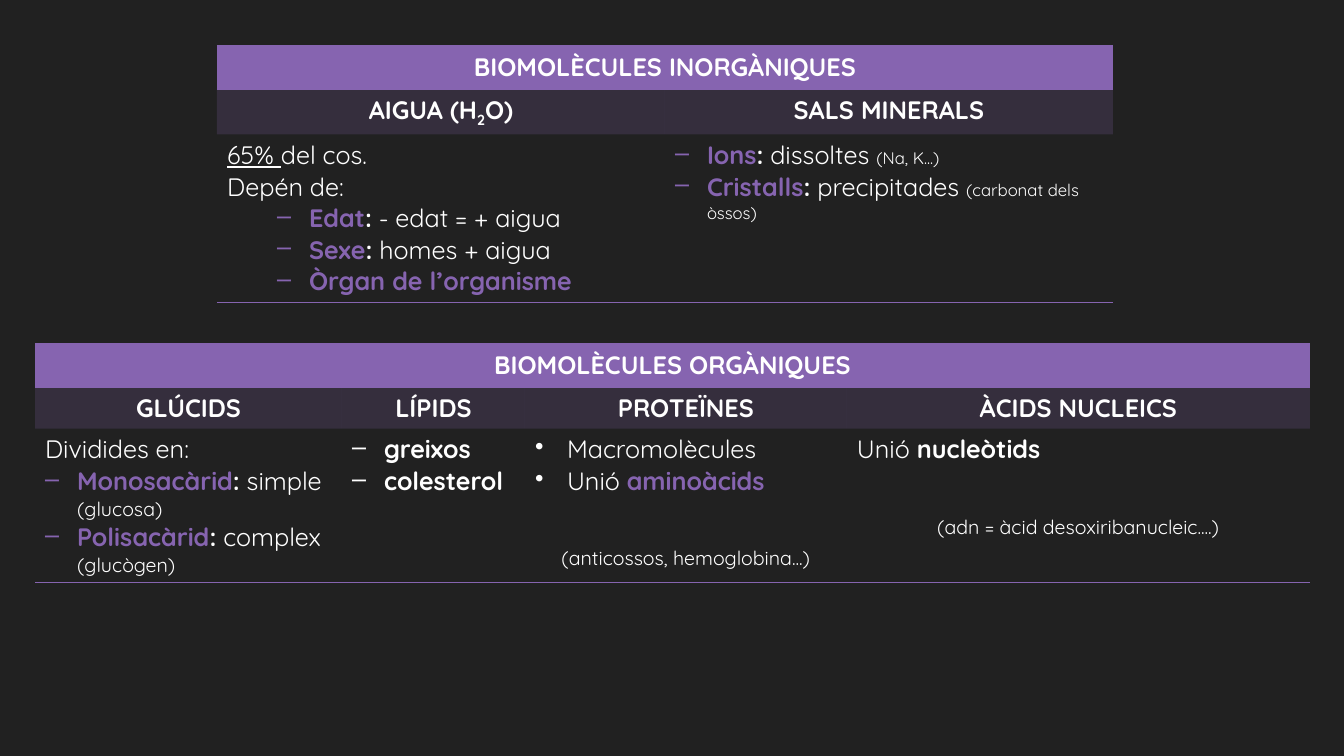
from dataclasses import dataclass

from lxml import etree
from pptx import Presentation
from pptx.dml.color import RGBColor
from pptx.enum.text import PP_ALIGN
from pptx.oxml.ns import qn
from pptx.util import Pt

CENTER = PP_ALIGN.CENTER
LEFT = PP_ALIGN.LEFT
EMU_PER_PX = 914400 / 100.8
PLAIN_TABLE_STYLE = "{2D5ABB26-0587-4C30-8999-92F81FD0307C}"


@dataclass(frozen=True)
class Theme:
    background: str = "212121"
    accent: str = "8664B0"
    text: str = "FFFFFF"
    font: str = "Quicksand"
    body: int = 18
    note: int = 14
    small: int = 12
    band_alpha: int = 20000
    rule: int = 1


THEME = Theme()


def px(length):
    return round(length * EMU_PER_PX)


def write(para, text, size=THEME.body, color=THEME.text, bold=False, underline=False, baseline=0):
    if text.startswith("\n"):
        para.add_line_break()
        text = text[1:]
    span = para.add_run()
    span.text = text
    font = span.font
    font.name = THEME.font
    font.size = Pt(size)
    font.bold = bold
    font.underline = underline
    font.color.rgb = RGBColor.from_string(color)
    if baseline:
        font._element.set("baseline", str(baseline))


def line(*spans, bullet=None, indent=32, align=LEFT, spacing=None):
    return {"spans": spans, "bullet": bullet, "indent": indent, "align": align, "spacing": spacing}


def term(name, *rest, indent=32):
    head = [(name, {"color": THEME.accent, "bold": True})]
    if rest:
        head.append((":", {"bold": True}))
    return line(*head, *rest, bullet="–", indent=indent)


def normal(text):
    return text, {}


def strong(text):
    return text, {"bold": True}


def note(text, size=THEME.note):
    return text, {"size": size}


def heading(*spans):
    return [line(*spans, align=CENTER)]


def fill_text(cell, lines):
    frame = cell.text_frame
    for index, item in enumerate(lines):
        para = frame.add_paragraph() if index else frame.paragraphs[0]
        para.alignment = item["align"]
        if item["spacing"]:
            para.line_spacing = item["spacing"]
        if item["bullet"]:
            properties = para._p.get_or_add_pPr()
            properties.set("marL", str(px(item["indent"])))
            properties.set("indent", str(-px(32)))
            etree.SubElement(properties, qn("a:buChar")).set("char", item["bullet"])
        for text, style in item["spans"]:
            write(para, text, **style)


def paint(cell, alpha=None):
    cell.fill.solid()
    cell.fill.fore_color.rgb = RGBColor.from_string(THEME.accent)
    if alpha:
        color = cell._tc.get_or_add_tcPr().find(".//" + qn("a:srgbClr"))
        etree.SubElement(color, qn("a:alpha")).set("val", str(alpha))


def rule(cell, *sides):
    properties = cell._tc.get_or_add_tcPr()
    for index, side in enumerate(sides):
        border = etree.Element(qn("a:ln" + side))
        border.set("w", str(Pt(THEME.rule)))
        solid = etree.SubElement(border, qn("a:solidFill"))
        etree.SubElement(solid, qn("a:srgbClr")).set("val", THEME.accent)
        properties.insert(index, border)


def add_family(page, box, widths, heights, title, headings, bodies):
    left, top = box
    frame = page.shapes.add_table(
        3, len(widths), px(left), px(top), px(sum(widths)), px(sum(heights)))
    table = frame.table
    table.first_row = table.horz_banding = False
    table._tbl.tblPr.find(qn("a:tableStyleId")).text = PLAIN_TABLE_STYLE
    for column, width in zip(table.columns, widths):
        column.width = px(width)
    for row, height in zip(table.rows, heights):
        row.height = px(height)

    banner = table.cell(0, 0)
    banner.merge(table.cell(0, len(widths) - 1))
    fill_text(banner, heading(strong(title)))
    for index, (spans, body) in enumerate(zip(headings, bodies)):
        paint(table.cell(0, index))
        rule(table.cell(0, index), "T", "B")
        fill_text(table.cell(1, index), heading(*spans))
        paint(table.cell(1, index), THEME.band_alpha)
        fill_text(table.cell(2, index), body)
        rule(table.cell(2, index), "B")


def add_inorganic(page, box):
    water = [
        line(("65% ", {"underline": True}), normal("del cos.")),
        line(normal("Depén de:")),
        term("Edat", normal(" - edat = + aigua"), indent=82),
        term("Sexe", normal(" homes + aigua"), indent=82),
        term("Òrgan de l’organisme", indent=82),
    ]
    salts = [
        term("Ions", normal(" dissoltes "), note("(Na, K...)", THEME.small)),
        term("Cristalls", normal(" precipitades "), note("(carbonat dels òssos)", THEME.small)),
    ]
    formula = [strong("AIGUA (H"), ("2", {"bold": True, "baseline": -25000}), strong("O)")]
    add_family(page, box, [448, 448], [43, 45, 168], "BIOMOLÈCULES INORGÀNIQUES",
               [formula, [strong("SALS MINERALS")]], [water, salts])


def add_organic(page, box):
    sugars = [
        line(normal("Dividides en:")),
        term("Monosacàrid", normal(" simple"), note("\n(glucosa)")),
        term("Polisacàrid", normal(" complex"), note("\n(glucògen)")),
    ]
    lipids = [line(strong(name), bullet="–") for name in ("greixos", "colesterol")]
    proteins = [
        line(normal("Macromolècules"), bullet="•"),
        line(normal("Unió "), ("aminoàcids", {"color": THEME.accent, "bold": True}), bullet="•"),
        line(note("(anticossos, hemoglobina...)"), align=CENTER, spacing=3.0),
    ]
    nucleic = [
        line(normal("Unió "), strong("nucleòtids")),
        line(note("(adn = àcid desoxiribanucleic....)"), align=CENTER, spacing=3.0),
    ]
    names = ["GLÚCIDS", "LÍPIDS", "PROTEÏNES", "ÀCIDS NUCLEICS"]
    add_family(page, box, [307, 183, 322, 463], [43, 41, 153], "BIOMOLÈCULES ORGÀNIQUES",
               [[strong(name)] for name in names], [sugars, lipids, proteins, nucleic])


def main():
    deck = Presentation()
    deck.slide_width, deck.slide_height = px(1344), px(756)
    page = deck.slides.add_slide(deck.slide_layouts[6])
    page.background.fill.solid()
    page.background.fill.fore_color.rgb = RGBColor.from_string(THEME.background)
    add_inorganic(page, (217, 46))
    add_organic(page, (35, 344))
    deck.save("out.pptx")


if __name__ == "__main__":
    main()
